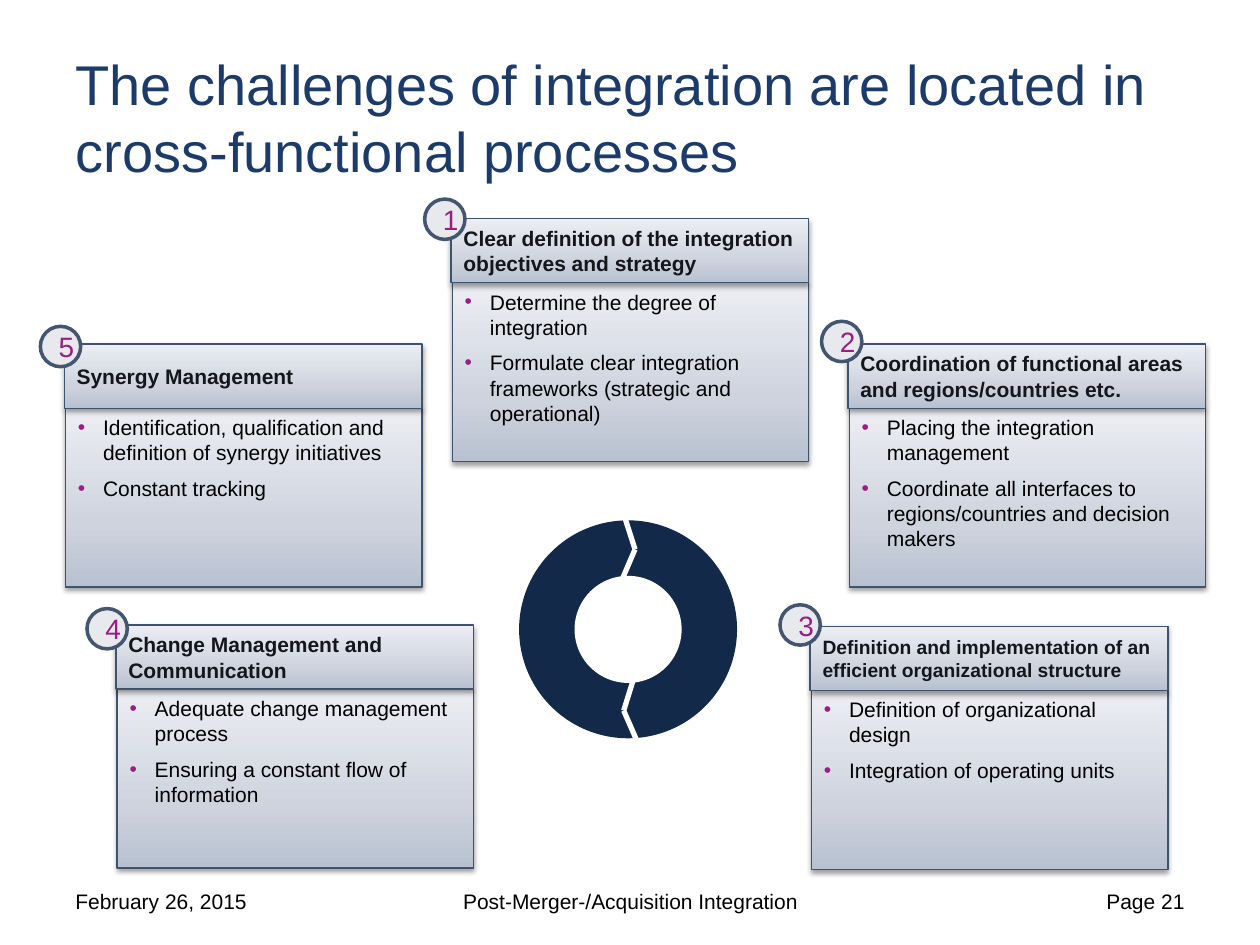
from typing import NamedTuple

from lxml.etree import SubElement
from pptx import Presentation
from pptx.dml.color import RGBColor
from pptx.enum.shapes import MSO_CONNECTOR, MSO_SHAPE
from pptx.enum.text import MSO_ANCHOR, PP_ALIGN
from pptx.oxml import parse_xml
from pptx.oxml.ns import nsdecls, qn
from pptx.util import Inches, Pt

FONT = "Arial"
NAVY, RING, WHITE, BLACK = "1C3B6B", "13294A", "FFFFFF", "000000"
HEADING, ACCENT = "14161B", "991D85"
CARD_LINE, BADGE_LINE, BADGE_FILL = "40536E", "43556F", "E7E9ED"
CARD_STOPS = ((0, "B8C1D0"), (35, "CED3DE"), (100, "ECEEF3"))

# The slide is a grid of 100 columns by 75 rows.
SLIDE_WIDTH, SLIDE_HEIGHT = Inches(10), Inches(7.5)
COLUMN, ROW = SLIDE_WIDTH / 100, SLIDE_HEIGHT / 75
CARD_WIDTH, HEADER_HEIGHT, BODY_HEIGHT = 28.4, 5.1, 14.2
BODY_INSET = 0.1
BADGE_SIZE = 3.2


class Area(NamedTuple):
    column: float
    row: float
    columns: float
    rows: float


class Card(NamedTuple):
    number: str
    column: float
    row: float
    badge: tuple[float, float]
    heading: str
    points: tuple[str, ...]
    heading_size: int = 12


class Footer(NamedTuple):
    column: float
    columns: float
    align: PP_ALIGN
    text: str


CARDS = (
    Card("1", 35.8, 17.35, (33.7, 15.8), "Clear definition of the integration objectives and strategy",
         ("Determine the degree of integration",
          "Formulate clear integration frameworks (strategic and operational)")),
    Card("2", 67.3, 27.3, (65.2, 25.5), "Coordination of functional areas and regions/countries etc.",
         ("Placing the integration management",
          "Coordinate all interfaces to regions/countries and decision makers")),
    Card("3", 64.3, 49.7, (61.9, 48), "Definition and implementation of an efficient organizational structure",
         ("Definition of organizational design", "Integration of operating units"), 11),
    Card("5", 5.1, 27.3, (3.2, 25.9), "Synergy Management",
         ("Identification, qualification and definition of synergy initiatives",
          "Constant tracking")),
    Card("4", 9.2, 49.6, (6.9, 48.3), "Change Management and Communication",
         ("Adequate change management process",
          "Ensuring a constant flow of information")),
)

RING_AREAS = ((Area(41.2, 41.3, 17.3, 17.3), RING), (Area(45.6, 45.7, 8.5, 8.5), WHITE))
RING_CUTS = (
    ((49.5, 56.4), (51.6, 61.2)),
    ((51.3, 50.6), (49.5, 56.4)),
    ((50.4, 43.6), (48.8, 38.6)),
    ((48, 49.2), (50.4, 43.6)),
)

FOOTERS = (
    Footer(34.2, 31.7, PP_ALIGN.CENTER, "Post-Merger-/Acquisition Integration"),
    Footer(71.7, 23.3, PP_ALIGN.RIGHT, "Page 21"),
    Footer(5, 23.3, PP_ALIGN.LEFT, "February 26, 2015"),
)


def color(value: str) -> RGBColor:
    return RGBColor.from_string(value)


def point(column: float, row: float) -> tuple[int, int]:
    return round(column * COLUMN), round(row * ROW)


def place(area: Area) -> tuple[int, int, int, int]:
    return point(area.column, area.row) + point(area.columns, area.rows)


def add_span(para, text: str, size: int, value: str, bold: bool = False) -> None:
    span = para.add_run()
    span.text = text
    span.font.name, span.font.size, span.font.bold = FONT, Pt(size), bold
    span.font.color.rgb = color(value)


def start_text(shape, anchor: MSO_ANCHOR, align: PP_ALIGN):
    """Set up the frame and return its first paragraph."""
    frame = shape.text_frame
    frame.word_wrap, frame.vertical_anchor = True, anchor
    frame.paragraphs[0].alignment = align
    return frame.paragraphs[0]


def add_form(shapes, preset: MSO_SHAPE, area: Area, fill: str | None = None,
             line: str | None = None, weight: float = 0):
    shape = shapes.add_shape(preset, *place(area))
    shape.shadow.inherit = False
    if fill:
        shape.fill.solid()
        shape.fill.fore_color.rgb = color(fill)
    if line:
        shape.line.color.rgb = color(line)
        shape.line.width = Pt(weight)
    else:
        shape.line.fill.background()
    return shape


def add_panel(shapes, area: Area):
    """Add a rectangle with the card's gradient and soft shadow."""
    panel = add_form(shapes, MSO_SHAPE.RECTANGLE, area, line=CARD_LINE, weight=0.75)
    stops = "".join(f'<a:gs pos="{share * 1000}"><a:srgbClr val="{value}"/></a:gs>'
                    for share, value in CARD_STOPS)
    gradient = parse_xml(f'<a:gradFill {nsdecls("a")} rotWithShape="1"><a:gsLst>{stops}</a:gsLst>'
                         '<a:lin ang="16200000" scaled="0"/></a:gradFill>')
    properties = panel._element.spPr
    properties.find(qn("a:prstGeom")).addnext(gradient)
    properties.find(qn("a:effectLst")).append(parse_xml(
        f'<a:outerShdw {nsdecls("a")} blurRad="{Pt(3.1)}" dist="{Pt(1.6)}" dir="5400000" '
        f'rotWithShape="0"><a:srgbClr val="{BLACK}"><a:alpha val="38000"/></a:srgbClr></a:outerShdw>'))
    return panel


def add_bullet(para) -> None:
    properties = para._p.get_or_add_pPr()
    properties.set("marL", str(Inches(0.2)))
    properties.set("indent", str(-Inches(0.2)))
    SubElement(SubElement(properties, qn("a:buClr")), qn("a:srgbClr")).set("val", ACCENT)
    SubElement(properties, qn("a:buFont")).set("typeface", FONT)
    SubElement(properties, qn("a:buChar")).set("char", "•")


def add_card(shapes, card: Card) -> None:
    group = shapes.add_group_shape().shapes
    body = add_panel(group, Area(card.column + BODY_INSET, card.row + HEADER_HEIGHT,
                                 CARD_WIDTH - BODY_INSET, BODY_HEIGHT))
    para = start_text(body, MSO_ANCHOR.TOP, PP_ALIGN.LEFT)
    for index, text in enumerate(card.points):
        if index:
            para = body.text_frame.add_paragraph()
            para.alignment = PP_ALIGN.LEFT
        para.space_after = Pt(6)
        add_bullet(para)
        add_span(para, text, 12, BLACK)

    header = add_panel(group, Area(card.column, card.row, CARD_WIDTH, HEADER_HEIGHT))
    para = start_text(header, MSO_ANCHOR.MIDDLE, PP_ALIGN.LEFT)
    add_span(para, card.heading, card.heading_size, HEADING, bold=True)

    badge = add_form(shapes, MSO_SHAPE.OVAL, Area(*card.badge, BADGE_SIZE, BADGE_SIZE),
                     BADGE_FILL, BADGE_LINE, 2)
    add_span(start_text(badge, MSO_ANCHOR.MIDDLE, PP_ALIGN.CENTER), card.number, 16, ACCENT)


def add_ring(shapes) -> None:
    group = shapes.add_group_shape().shapes
    for area, fill in RING_AREAS:
        add_form(group, MSO_SHAPE.OVAL, area, fill)
    for start, end in RING_CUTS:
        cut = group.add_connector(MSO_CONNECTOR.STRAIGHT, *point(*start), *point(*end))
        cut.line.color.rgb = color(WHITE)
        cut.line.width = Pt(3)
        SubElement(cut._element.spPr, qn("a:effectLst"))


def add_footer(shapes, footer: Footer) -> None:
    box = shapes.add_textbox(*place(Area(footer.column, 69.5, footer.columns, 4)))
    add_span(start_text(box, MSO_ANCHOR.MIDDLE, footer.align), footer.text, 12, BLACK)


def main() -> None:
    deck = Presentation()
    deck.slide_width, deck.slide_height = SLIDE_WIDTH, SLIDE_HEIGHT
    page = deck.slides.add_slide(deck.slide_layouts[5])
    title = page.shapes.title
    title.left, title.top, title.width, title.height = place(Area(5, 3, 90, 12.5))
    para = start_text(title, MSO_ANCHOR.MIDDLE, PP_ALIGN.LEFT)
    add_span(para, "The challenges of integration are located in cross-functional processes", 32, NAVY)
    for card in CARDS:
        add_card(page.shapes, card)
    add_ring(page.shapes)
    for footer in FOOTERS:
        add_footer(page.shapes, footer)
    deck.save("out.pptx")


if __name__ == "__main__":
    main()
